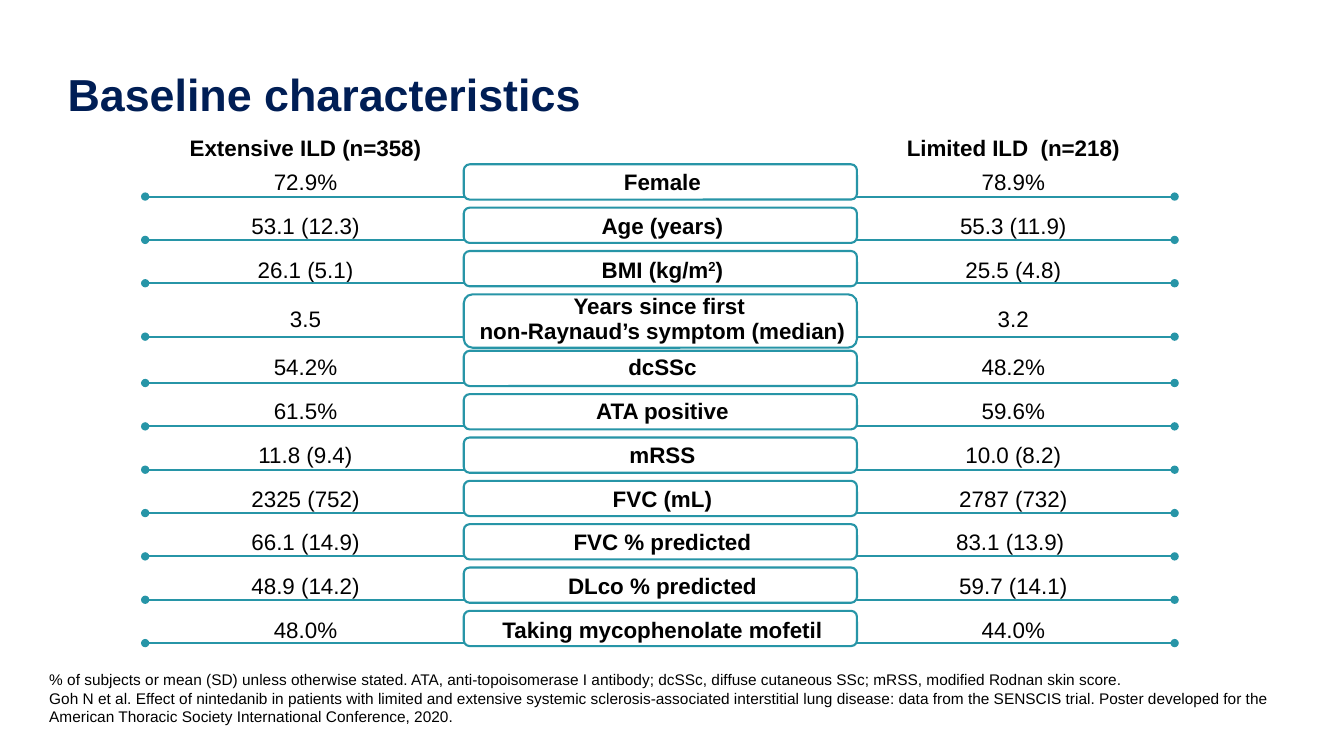
from lxml import etree
from pptx import Presentation
from pptx.dml.color import RGBColor
from pptx.enum.shapes import MSO_CONNECTOR, MSO_SHAPE
from pptx.enum.text import MSO_ANCHOR, PP_ALIGN
from pptx.oxml.ns import qn
from pptx.util import Inches, Pt

COLORS = {"title": "001E55", "text": "000000", "teal": "2795A7"}

HEADERS = ("Extensive ILD (n=358)", "", "Limited ILD  (n=218)")
CHARACTERISTICS = [
    ("72.9%", "Female", "78.9%"),
    ("53.1 (12.3)", "Age (years)", "55.3 (11.9)"),
    ("26.1 (5.1)", "BMI (kg/m^2^)", "25.5 (4.8)"),
    ("3.5", "Years since first \nnon-Raynaud’s symptom (median)", "3.2"),
    ("54.2%", "dcSSc", "48.2%"),
    ("61.5%", "ATA positive", "59.6%"),
    ("11.8 (9.4)", "mRSS", "10.0 (8.2)"),
    ("2325 (752)", "FVC (mL)", "2787 (732)"),
    ("66.1 (14.9)", "FVC % predicted", "83.1 (13.9) "),
    ("48.9 (14.2)", "DLco % predicted", "59.7 (14.1)"),
    ("48.0%", "Taking mycophenolate mofetil", "44.0%"),
]
TALL = 3  # index of the two-line characteristic
FOOTNOTES = [
    "% of subjects or mean (SD) unless otherwise stated. ATA, anti-topoisomerase I antibody; "
    "dcSSc, diffuse cutaneous SSc; mRSS, modified Rodnan skin score.",
    "Goh N et al. Effect of nintedanib in patients with limited and extensive systemic "
    "sclerosis-associated interstitial lung disease: data from the SENSCIS trial. Poster "
    "developed for the American Thoracic Society International Conference, 2020.",
]


def write(paragraph, text, size=16, color="text", bold=False, align=PP_ALIGN.LEFT, spacing=None):
    """Write text; a newline breaks the line and ^...^ marks a superscript."""
    paragraph.alignment = align
    if spacing:
        paragraph.line_spacing = spacing
    for line_number, line in enumerate(text.split("\n")):
        if line_number:
            paragraph.add_line_break()
        for part_number, part in enumerate(line.split("^")):
            run = paragraph.add_run()
            run.text = part
            run.font.name = "Arial"
            run.font.size = Pt(size)
            run.font.bold = bold
            run.font.color.rgb = RGBColor.from_string(COLORS[color])
            if part_number % 2:
                run._r.get_or_add_rPr().set("baseline", "30000")


def style_outline(shape):
    shape.line.color.rgb = RGBColor.from_string(COLORS["teal"])
    shape.line.width = Pt(1.5)


presentation = Presentation()
presentation.slide_width = Inches(13.33)
presentation.slide_height = Inches(7.5)
slide = presentation.slides.add_slide(presentation.slide_layouts[6])

# Title
title_frame = slide.shapes.add_textbox(Inches(0.67), Inches(0.3), Inches(12), Inches(1.25)).text_frame
title_frame.word_wrap = True
title_frame.vertical_anchor = MSO_ANCHOR.MIDDLE
title_frame.margin_left = title_frame.margin_right = 0
title_frame.margin_top = title_frame.margin_bottom = 0
write(title_frame.paragraphs[0], "Baseline characteristics", size=32, color="title", bold=True)

# Footnotes
footnote_frame = slide.shapes.add_textbox(Inches(0.39), Inches(6.6), Inches(12.94), Inches(0.66)).text_frame
footnote_frame.word_wrap = True
for number, footnote in enumerate(FOOTNOTES):
    paragraph = footnote_frame.add_paragraph() if number else footnote_frame.paragraphs[0]
    write(paragraph, footnote, size=11)

# Table
table_rows = [HEADERS] + CHARACTERISTICS
table_height, header_height, tall_height = 5.26, 0.39, 0.53
row_height = (table_height - header_height - tall_height) / (len(CHARACTERISTICS) - 1)
table = slide.shapes.add_table(len(table_rows), len(HEADERS), Inches(1.87), Inches(1.2),
                               Inches(9.28), Inches(table_height)).table
table.first_row = table.horz_banding = False
for column, width in zip(table.columns, (2.32, 4.76, 2.2)):
    column.width = Inches(width)
for row_number, texts in enumerate(table_rows):
    is_header = row_number == 0
    height = header_height if is_header else tall_height if row_number == TALL + 1 else row_height
    table.rows[row_number].height = Inches(height)
    for column_number, text in enumerate(texts):
        cell = table.cell(row_number, column_number)
        cell.fill.background()
        cell.margin_left = cell.margin_right = cell.margin_top = cell.margin_bottom = 0
        cell.vertical_anchor = MSO_ANCHOR.BOTTOM if is_header else MSO_ANCHOR.MIDDLE
        if text:
            write(cell.text_frame.paragraphs[0], text, bold=is_header or column_number == 1,
                  align=PP_ALIGN.CENTER, spacing=1.5 if is_header else None)

# Label frames with a dotted line to each side
box_left, box_width, box_height, pitch = 4.6, 3.9, 0.35, 0.43
for index in range(len(CHARACTERISTICS)):
    is_tall = index == TALL
    box_top = 1.63 + pitch * index + (0.13 if index > TALL else 0)
    box = slide.shapes.add_shape(MSO_SHAPE.ROUNDED_RECTANGLE, Inches(box_left), Inches(box_top),
                                 Inches(box_width), Inches(tall_height if is_tall else box_height))
    box.shadow.inherit = False
    box.fill.background()
    style_outline(box)

    line_y = Inches(box_top + (0.42 if is_tall else 0.32))
    for start, end, dot in ((1.44, box_left, "headEnd"), (box_left + box_width, 11.65, "tailEnd")):
        line = slide.shapes.add_connector(MSO_CONNECTOR.STRAIGHT, Inches(start), line_y, Inches(end), line_y)
        style_outline(line)
        etree.SubElement(line.line._get_or_add_ln(), qn(f"a:{dot}"), type="oval")
        etree.SubElement(line._element.spPr, qn("a:effectLst"))

presentation.save("out.pptx")
